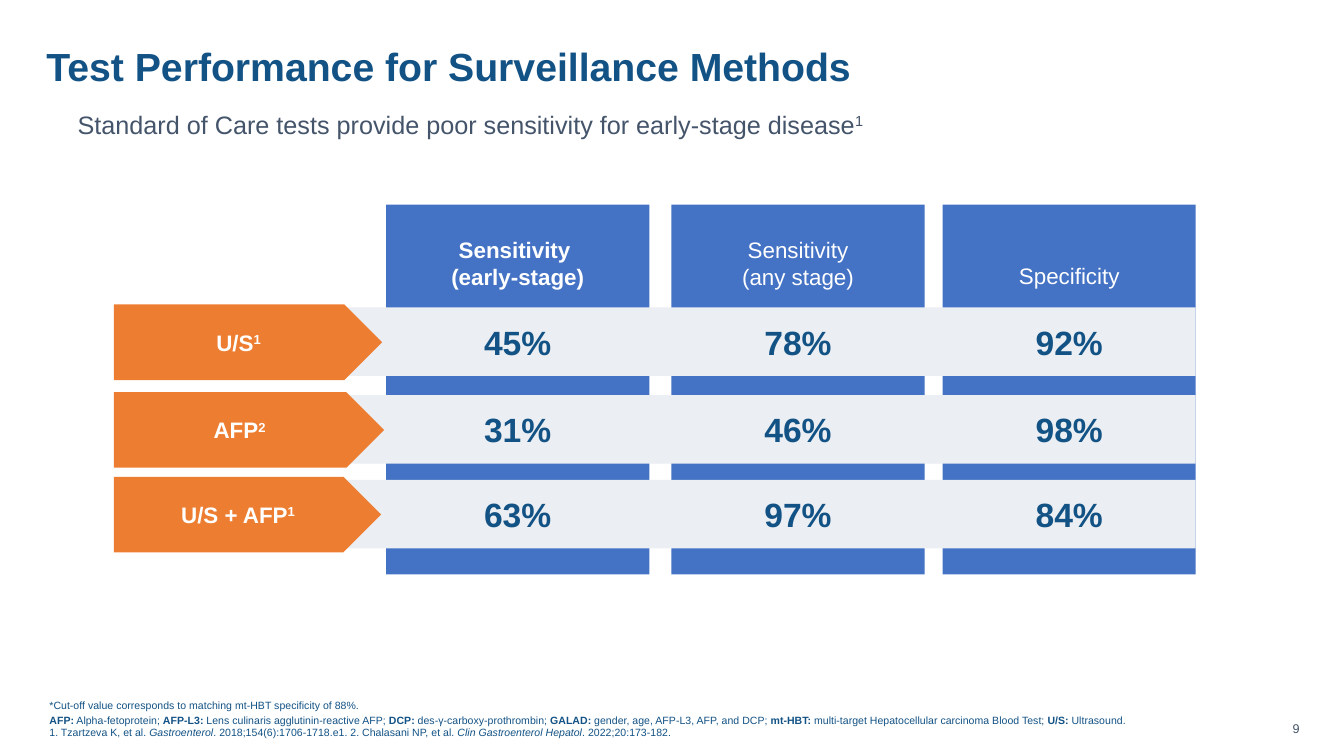
"""Build the slide on test performance for surveillance methods."""
from lxml import etree
from pptx import Presentation
from pptx import util as u
from pptx.dml.color import RGBColor
from pptx.enum import shapes, text
from pptx.oxml.ns import qn

NAVY = RGBColor(0x12, 0x52, 0x85)
SLATE = RGBColor(0x44, 0x54, 0x6A)
BLUE = RGBColor(0x44, 0x72, 0xC4)
ORANGE = RGBColor(0xED, 0x7D, 0x31)
PALE = RGBColor(0xEB, 0xEE, 0xF2)
WHITE = RGBColor(0xFF, 0xFF, 0xFF)

TOP, MIDDLE, BOTTOM = (text.MSO_ANCHOR.TOP, text.MSO_ANCHOR.MIDDLE,
                       text.MSO_ANCHOR.BOTTOM)
LEFT, CENTER, RIGHT = (text.PP_ALIGN.LEFT, text.PP_ALIGN.CENTER,
                       text.PP_ALIGN.RIGHT)
BOLD, ITALIC, SUPER = {"bold": True}, {"italic": True}, {"super": True}


class Deck:
    """Hold the text style and the current slide."""

    font = "Arial"
    insets = (0.1, 0.05, 0.1, 0.05)

    def __init__(self, prs, layout):
        self.s = prs.slides.add_slide(prs.slide_layouts[layout])

    def fill_text(self, sp, paras, size, color, bold=False, align=CENTER,
                  anchor=MIDDLE, insets=insets, formats=()):
        tf = sp.text_frame
        tf.word_wrap = True
        tf.auto_size = text.MSO_AUTO_SIZE.NONE
        tf.vertical_anchor = anchor
        for side, gap in zip(("left", "top", "right", "bottom"), insets):
            setattr(tf, f"margin_{side}", u.Inches(gap))
        for i, runs in enumerate(paras):
            p = tf.paragraphs[0] if i == 0 else tf.add_paragraph()
            style = {"alignment": align, "space_before": u.Pt(0), "line_spacing": 1.0}
            style.update(formats[i] if formats else {})
            for name, value in style.items():
                setattr(p, name, value)
            if sp.is_placeholder:
                pPr = p._p.get_or_add_pPr()
                pPr.set("marL", "0")
                pPr.set("indent", "0")
                etree.SubElement(pPr, qn("a:buNone"))
            for words, extra in runs:
                r = p.add_run()
                r.text = words
                font = {"name": self.font, "size": u.Pt(size), "bold": bold, **extra}
                if font.pop("super", False):
                    r._r.get_or_add_rPr().set("baseline", "30000")
                for name, value in font.items():
                    setattr(r.font, name, value)
                r.font.color.rgb = color

    def placeholder(self, idx, box, paras, size, color, **style):
        sp = self.s.placeholders[idx]
        for name, value in zip(("left", "top", "width", "height"), box):
            setattr(sp, name, u.Inches(value))
        self.fill_text(sp, paras, size, color, align=LEFT, **style)

    def shape(self, kind, box, fill, paras=(), **style):
        sp = self.s.shapes.add_shape(kind, *map(u.Inches, box))
        sp.shadow.inherit = False
        sp.fill.solid()
        sp.fill.fore_color.rgb = fill
        sp.line.fill.background()
        if paras:
            self.fill_text(sp, paras, 16, WHITE, **style)

    def label(self, box, words, size, color, **style):
        sp = self.s.shapes.add_textbox(*map(u.Inches, box))
        self.fill_text(sp, [[(words, {})]], size, color, **style)


def main():
    prs = Presentation()
    prs.slide_width, prs.slide_height = u.Inches(13.33), u.Inches(7.5)
    d = Deck(prs, 3)
    rect, arrow = shapes.MSO_SHAPE.RECTANGLE, shapes.MSO_SHAPE.PENTAGON

    tight = {"line_spacing": 0.85}
    flush = (0, 0.05, 0.1, 0.05)
    d.placeholder(0, (0.46, 0.44, 12.35, 0.6),
                  [[("Test Performance for Surveillance Methods", {})]],
                  28, NAVY, bold=True, anchor=TOP, insets=flush, formats=[tight])
    d.placeholder(1, (0.77, 1.08, 12.56, 0.43),
                  [[("Standard of Care tests provide poor sensitivity for early-stage disease", {}),
                    ("1", SUPER)]],
                  18, SLATE, anchor=TOP, insets=flush, formats=[tight])

    terms = [("AFP:", " Alpha-fetoprotein; "),
             ("AFP-L3:", " Lens culinaris agglutinin-reactive AFP; "),
             ("DCP:", " des-γ-carboxy-prothrombin; "),
             ("GALAD:", " gender, age, AFP-L3, AFP, and DCP; "),
             ("mt-HBT:", " multi-target Hepatocellular carcinoma Blood Test; "),
             ("U/S:", " Ultrasound.")]
    glossary = [run for term, meaning in terms
                for run in ((term, BOLD), (meaning, {}))]
    sources = [("1. Tzartzeva K, et al. ", {}), ("Gastroenterol", ITALIC),
               (". 2018;154(6):1706-1718.e1. 2. Chalasani NP, et al. ", {}),
               ("Clin Gastroenterol Hepatol", ITALIC), (". 2022;20:173-182.", {})]
    d.placeholder(2, (0.49, 6.86, 11.04, 0.47),
                  [[("*Cut-off value corresponds to matching mt-HBT specificity of 88%.", {})],
                   glossary, sources],
                  7.5, NAVY, anchor=BOTTOM, insets=(0, 0, 0.1, 0),
                  formats=[{}, {**tight, "space_before": u.Pt(3)}, {}])

    columns = [(3.83, 2.61, ["Sensitivity ", "(early-stage)"], True, 0.31),
               (6.66, 2.51, ["Sensitivity", "(any stage)"], False, 0.31),
               (9.35, 2.51, ["Specificity"], False, 0.57)]
    for x, w, lines, bold, drop in columns:
        d.shape(rect, (x, 2.03, w, 3.67), BLUE, [[(line, {})] for line in lines],
                bold=bold, anchor=TOP, insets=(0.1, drop, 0.1, 0.05))

    rows = [(3.05, 2.66, "U/S", "1", ["45%", "78%", "92%"]),
            (3.92, 2.68, "AFP", "2", ["31%", "46%", "98%"]),
            (4.76, 2.65, "U/S + AFP", "1", ["63%", "97%", "84%"])]
    for y, w, test, ref, values in rows:
        d.shape(rect, (1.4, y, 10.46, 0.68), PALE)
        d.shape(arrow, (1.13, y - 0.03, w, 0.75), ORANGE,
                [[(test, {}), (ref, SUPER)]], bold=True)
        for (x, width, *_), value in zip(columns, values):
            d.label((x, y + 0.08, width, 0.52), value, 24, NAVY, bold=True)

    d.label((12.41, 7.17, 0.48, 0.13), "9", 9, SLATE, align=RIGHT, anchor=BOTTOM,
            insets=(0, 0, 0, 0), formats=[{"line_spacing": 0.9}])
    prs.save("out.pptx")


if __name__ == "__main__":
    main()
